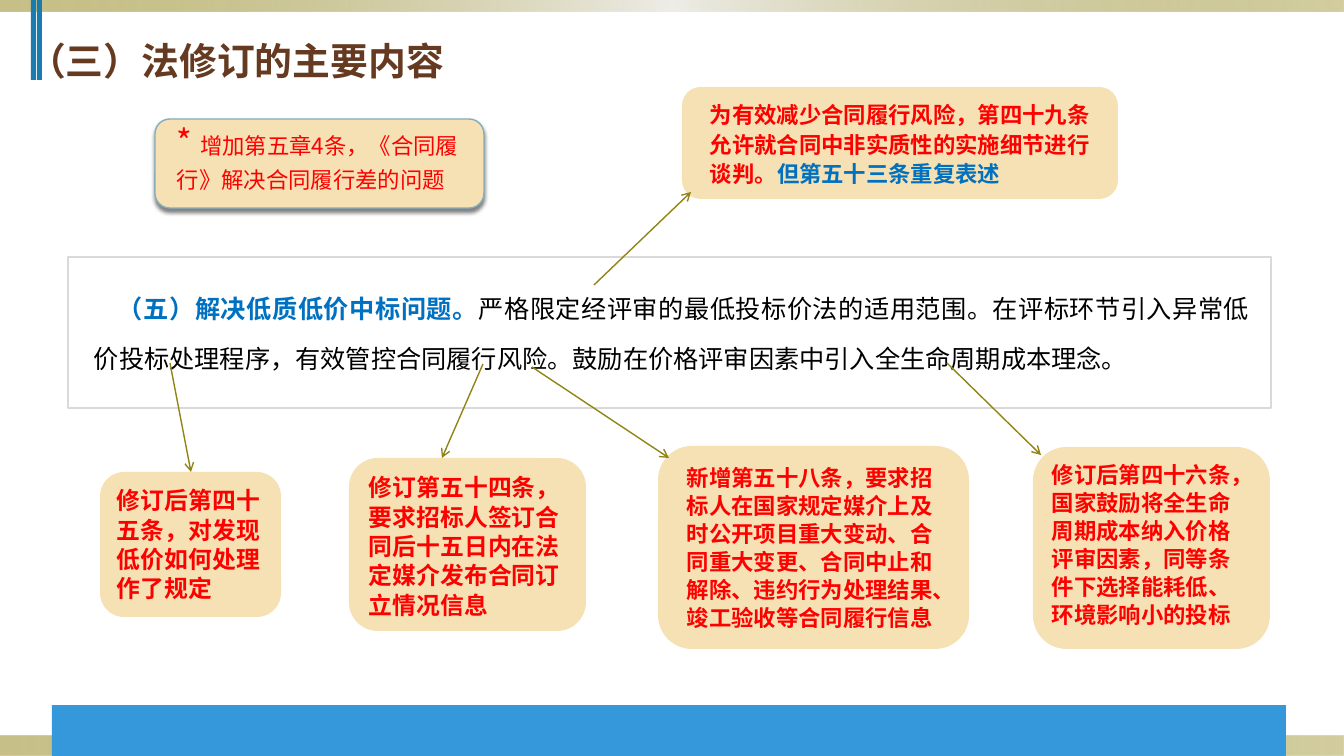
import lxml.etree
import pptx
import pptx.dml.color
import pptx.enum.shapes
import pptx.enum.text
import pptx.oxml
import pptx.oxml.ns
import pptx.util

RGBColor = pptx.dml.color.RGBColor
SHAPE = pptx.enum.shapes.MSO_SHAPE
ALIGN = pptx.enum.text.PP_ALIGN
ANCHOR = pptx.enum.text.MSO_ANCHOR

OLIVE = RGBColor(0x91, 0x84, 0x15)
PALE = RGBColor(0xEE, 0xED, 0xE8)
STRIPE_BLUE = RGBColor(0x1A, 0x7B, 0xAE)
FOOTER_BLUE = RGBColor(0x34, 0x98, 0xDB)
BROWN = RGBColor(0x65, 0x3A, 0x20)
WHITE = RGBColor(0xFF, 0xFF, 0xFF)
BLACK = RGBColor(0, 0, 0)
GREY = RGBColor(0xD9, 0xD9, 0xD9)
SAND = RGBColor(0xF5, 0xE1, 0xB3)
SAND_EDGE = RGBColor(0x85, 0xAD, 0xBC)
RED = RGBColor(0xFF, 0, 0)
BLUE = RGBColor(0, 0x70, 0xC0)

FONT = "Noto Sans CJK SC"
EMU_PER_PX = 914400 / 100.8
SLIDE_SIZE = (1344, 756)
BAND_STOPS = [(0, OLIVE, 50), (50, PALE, 100), (100, OLIVE, 40)]
BANDS = [(0, 736, 1344, 20), (0, 0, 1344, 12)]
STRIPES = [(31, 0, 5, 80), (37, 0, 5, 80)]
FOOTER = (52, 705, 1234, 51)
PANEL = (68, 257, 1203, 151)

TITLE = {"area": (10, 37, 762, 46), "insets": (18, 5, 10, 5),
         "runs": [("（三）法修订的主要内容", 27, BROWN, True)],
         "paragraph": {}, "anchor": ANCHOR.MIDDLE}
BODY = {"area": (79, 269, 1180, 109), "insets": (9, 5, 9, 5),
        "runs": [("（五）解决低质低价中标问题。", 18, BLUE, True),
                 ("严格限定经评审的最低投标价法的适用范围。在评标环节引入异常低价投标处理程序，"
                  "有效管控合同履行风险。鼓励在价格评审因素中引入全生命周期成本理念。", 18, BLACK, False)],
        "paragraph": {"alignment": ALIGN.JUSTIFY, "line_spacing": pptx.util.Pt(35.4),
                      "space_before": pptx.util.Pt(11.2)},
        "margin": 6, "indent": 24}

CALLOUTS = [
    {"box": (100, 472, 181, 145), "area": (106, 480, 170, 130), "spacing": 21,
     "arrow": (170, 363, 191, 472),
     "runs": [("修订后第四十五条，对发现低价如何处理作了规定", 17, RED, True)]},
    {"box": (682, 87, 436, 112), "area": (699, 94, 420, 99), "spacing": 21,
     "arrow": (594, 285, 691, 192),
     "runs": [("为有效减少合同履行风险，第四十九条允许就合同中非实质性的实施细节进行谈判。", 16, RED, True),
              ("但第五十三条重复表述", 16, BLUE, True)]},
    {"box": (349, 458, 237, 173), "area": (358, 467, 220, 159), "spacing": 21,
     "arrow": (483, 364, 442, 458),
     "runs": [("修订第五十四条，要求招标人签订合同后十五日内在法定媒介发布合同订立情况信息", 17, RED, True)]},
    {"box": (658, 446, 311, 203), "area": (676, 458, 276, 180), "spacing": 20,
     "arrow": (532, 367, 669, 458),
     "runs": [("新增第五十八条，要求招标人在国家规定媒介上及时公开项目重大变动、合同重大变更、"
               "合同中止和解除、违约行为处理结果、竣工验收等合同履行信息", 16, RED, True)]},
    {"box": (155, 119, 329, 89), "area": (166, 124, 317, 76), "spacing": 23,
     "edge": SAND_EDGE,
     "runs": [("* ", 24, RED, False),
              ("增加第五章4条，《合同履行》解决合同履行差的问题", 16, RED, False)]},
    {"box": (1033, 447, 237, 202), "area": (1041, 455, 220, 180), "spacing": 20,
     "arrow": (947, 363, 1041, 455),
     "runs": [("修订后第四十六条，国家鼓励将全生命周期成本纳入价格评审因素，同等条件下选择能耗低、"
               "环境影响小的投标", 16, RED, True)]},
]


def px(value):
    return pptx.util.Emu(round(value * EMU_PER_PX))


def set_values(target, values):
    for name, value in values.items():
        setattr(target, name, value)


def add_element(parent, tag, **attributes):
    element = lxml.etree.SubElement(parent, pptx.oxml.ns.qn(tag))
    for name, value in attributes.items():
        element.set(name, str(value))
    return element


def add_color(parent, color, opacity):
    element = add_element(parent, "a:srgbClr", val=color)
    add_element(element, "a:alpha", val=opacity * 1000)


def add_box(slide, area, fill, edge=None, kind=SHAPE.RECTANGLE):
    shape = slide.shapes.add_shape(kind, *map(px, area))
    shape.shadow.inherit = False
    shape.fill.solid()
    shape.fill.fore_color.rgb = fill
    if edge is None:
        shape.line.fill.background()
    else:
        shape.line.color.rgb = edge
        shape.line.width = pptx.util.Pt(1)
    return shape


def add_band(slide, area):
    shape = add_box(slide, area, OLIVE)
    shape.fill.gradient()
    shape.fill.gradient_angle = 0
    stops = shape._element.spPr.find(".//" + pptx.oxml.ns.qn("a:gsLst"))
    for stop in list(stops):
        stops.remove(stop)
    for position, color, opacity in BAND_STOPS:
        add_color(add_element(stops, "a:gs", pos=position * 1000), color, opacity)


def add_drop_shadow(shape):
    effects = shape._element.spPr.find(pptx.oxml.ns.qn("a:effectLst"))
    shadow = add_element(effects, "a:outerShdw", blurRad=pptx.util.Pt(2.8),
                         dist=pptx.util.Pt(2.5), dir=90 * 60000, algn="ctr", rotWithShape=0)
    add_color(shadow, BLACK, 50)


def add_text(slide, area, runs, insets, paragraph, anchor=ANCHOR.TOP, margin=0, indent=0):
    frame = slide.shapes.add_textbox(*map(px, area)).text_frame
    left, top, right, bottom = map(px, insets)
    set_values(frame, {"word_wrap": True, "vertical_anchor": anchor, "margin_left": left,
                       "margin_top": top, "margin_right": right, "margin_bottom": bottom})
    line = frame.paragraphs[0]
    set_values(line, paragraph)
    properties = line._p.get_or_add_pPr()
    properties.set("marL", str(px(margin)))
    properties.set("indent", str(px(indent)))
    for text, size, color, bold in runs:
        run = line.add_run()
        run.text = text
        set_values(run.font, {"size": pptx.util.Pt(size), "bold": bold, "name": FONT})
        run.font.color.rgb = color
        add_element(run.font._element, "a:ea", typeface=FONT)


def add_arrow(slide, ends):
    connector = slide.shapes.add_connector(pptx.enum.shapes.MSO_CONNECTOR.STRAIGHT, *map(px, ends))
    connector.line.color.rgb = OLIVE
    connector.line.width = pptx.util.Pt(1)
    add_element(connector.line._get_or_add_ln(), "a:tailEnd", type="arrow")
    add_element(connector._element.spPr, "a:effectLst")


def add_callout(slide, callout):
    shape = add_box(slide, callout["box"], SAND, callout.get("edge"), SHAPE.ROUNDED_RECTANGLE)
    if "edge" in callout:
        add_drop_shadow(shape)
    add_text(slide, callout["area"], callout["runs"], (11, 5, 11, 5),
             {"line_spacing": pptx.util.Pt(callout["spacing"])})
    if "arrow" in callout:
        add_arrow(slide, callout["arrow"])


def main():
    presentation = pptx.Presentation()
    presentation.slide_width, presentation.slide_height = map(px, SLIDE_SIZE)
    slide = presentation.slides.add_slide(presentation.slide_layouts[6])
    for band in BANDS:
        add_band(slide, band)
    for stripe in STRIPES:
        add_box(slide, stripe, STRIPE_BLUE)
    add_text(slide, **TITLE)
    add_box(slide, FOOTER, FOOTER_BLUE)
    add_box(slide, PANEL, WHITE, GREY)
    add_text(slide, **BODY)
    for callout in CALLOUTS:
        add_callout(slide, callout)
    presentation.save("out.pptx")


if __name__ == "__main__":
    main()
